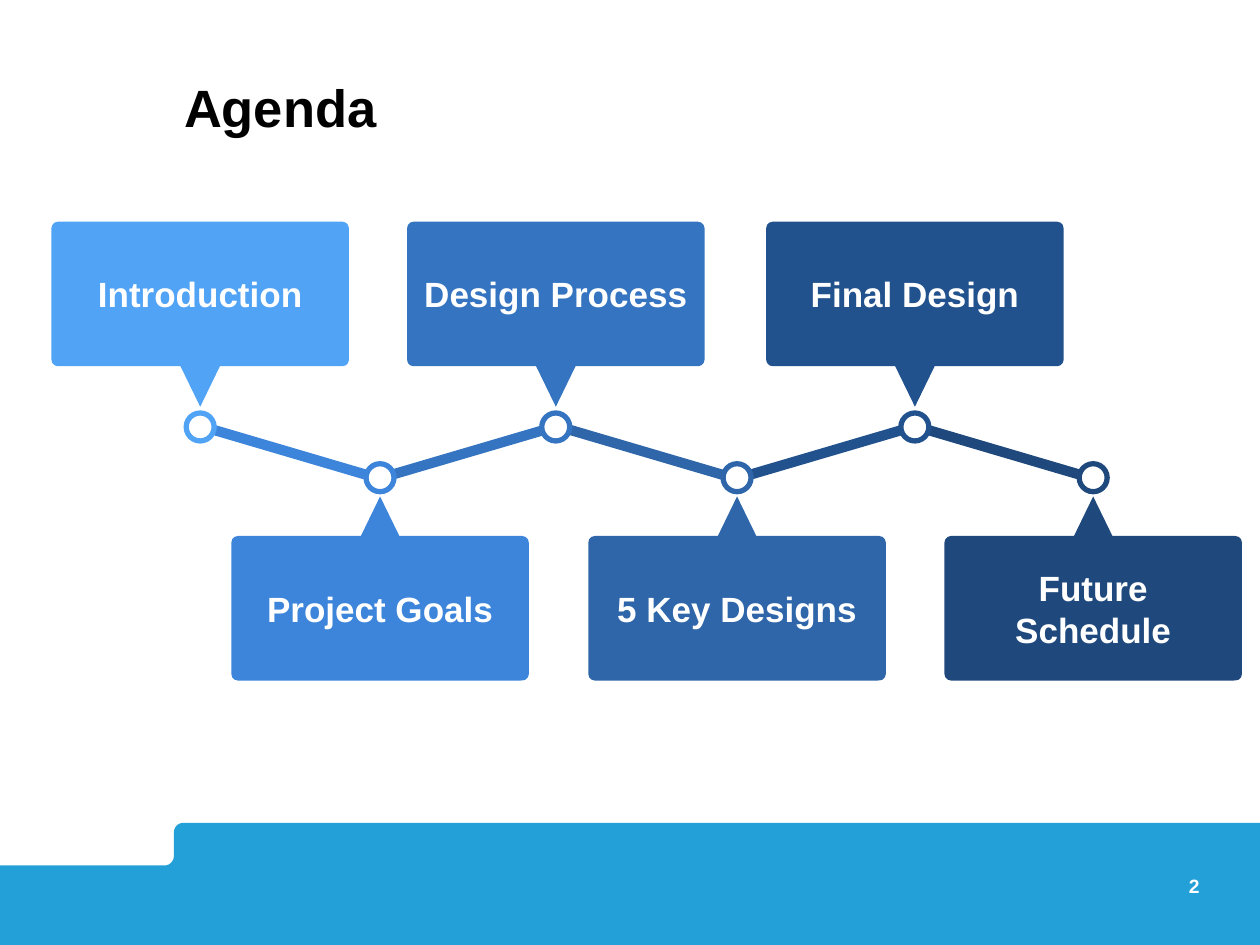
from math import cos, radians, sin
from pptx import Presentation
from pptx.dml.color import RGBColor
from pptx.enum.shapes import MSO_SHAPE
from pptx.enum.text import MSO_ANCHOR, PP_ALIGN
from pptx.util import Pt

BAR, CARD = MSO_SHAPE.ROUNDED_RECTANGLE, MSO_SHAPE.ROUNDED_RECTANGLE
DOT, TIP = MSO_SHAPE.OVAL, MSO_SHAPE.ISOSCELES_TRIANGLE
MID, TOP = MSO_ANCHOR.MIDDLE, MSO_ANCHOR.TOP
LEFT, MIDDLE, RIGHT = PP_ALIGN.LEFT, PP_ALIGN.CENTER, PP_ALIGN.RIGHT

THEME = {
    "font": "Arial", "ink": "000000", "white": "FFFFFF", "band": "24A0D8",
    "title": 30, "card": 20, "page": 11,
}
# Agenda steps: label, centre x, colour; they alternate above and below
STEPS = [
    ("Introduction", 114.4, "51A3F5"),
    ("Project Goals", 217.2, "3C85DB"),
    ("Design Process", 317.6, "3574C0"),
    ("5 Key Designs", 421.2, "2E66A9"),
    ("Final Design", 522.8, "22528D"),
    ("Future Schedule", 624.7, "1F497D"),
]
DOT_Y = (244, 273)
TIP_Y = (220.6, 295.5)
CARD_Y = (168, 347.6)


def write(shape, text, size, color, align, anchor=MID, inset=7.2, gap=1.0):
    frame = shape.text_frame
    edge = Pt(inset)
    look = {"word_wrap": True, "vertical_anchor": anchor, "margin_left": edge,
            "margin_right": edge, "margin_top": edge, "margin_bottom": edge}
    for key, val in look.items():
        setattr(frame, key, val)
    frame.text = text
    para = frame.paragraphs[0]
    para.alignment, para.line_spacing = align, gap
    font = para.runs[0].font
    for key, val in {"name": THEME["font"], "size": Pt(size), "bold": True}.items():
        setattr(font, key, val)
    font.color.rgb = RGBColor.from_string(color)


def draw(kind, x, y, wide, high, fill, turn=0, adj=None, line=None):
    """Add a filled shape centred on x, y."""
    shape = slide.shapes.add_shape(
        kind, Pt(x - wide / 2), Pt(y - high / 2), Pt(wide), Pt(high))
    shape.shadow.inherit = False
    shape.rotation = turn
    shape.fill.solid()
    shape.fill.fore_color.rgb = RGBColor.from_string(fill)
    if adj is not None:
        shape.adjustments[0] = adj
    if line:
        shape.line.color.rgb = RGBColor.from_string(line)
        shape.line.width = Pt(3)
    else:
        shape.line.fill.background()
    return shape


deck = Presentation()
deck.slide_width, deck.slide_height = Pt(720), Pt(540)
slide = deck.slides.add_slide(deck.slide_layouts[5])

# Footer band with a rounded step
curve = 5.4
turns = range(0, 91, 15)
rim = [(94 + curve * sin(radians(a)), 489.2 + curve * cos(radians(a))) for a in turns]
rim += [(104.8 - curve * cos(radians(a)), 475.6 - curve * sin(radians(a))) for a in turns]
rim += [(720, 470.2), (720, 540), (0, 540)]
path = slide.shapes.build_freeform(Pt(0), Pt(494.6))
path.add_line_segments([(Pt(x), Pt(y)) for x, y in rim], close=True)
band = path.convert_to_shape()
band.shadow.inherit = False
band.fill.solid()
band.fill.fore_color.rgb = RGBColor.from_string(THEME["band"])
band.line.fill.background()

# Title
title = slide.shapes.title
title.left, title.top, title.width, title.height = Pt(98), Pt(31.7), Pt(575.3), Pt(52.6)
write(title, "Agenda", THEME["title"], THEME["ink"], LEFT, gap=1.15)

# Bars between neighbouring steps
for i, (last, step) in enumerate(zip(STEPS, STEPS[1:])):
    turn = -16.4 if i % 2 else 16.4
    draw(BAR, (last[1] + step[1]) / 2, sum(DOT_Y) / 2, 110.9, 5.8, step[2], turn, 0.5)

# Cards with their pointers and dots
for i, (label, x, color) in enumerate(STEPS):
    low = i % 2
    draw(DOT, x, DOT_Y[low], 16, 16, THEME["white"], line=color)
    card = draw(CARD, x, CARD_Y[low], 170, 82.6, color, adj=0.045)
    write(card, label, THEME["card"], THEME["white"], MIDDLE)
    draw(TIP, x, TIP_Y[low], 23, 23.6, color, 0 if low else 180)

# Page number
page = slide.shapes.add_textbox(Pt(643.7), Pt(496), Pt(41.8), Pt(28.8))
write(page, "2", THEME["page"], THEME["white"], RIGHT, TOP, 0, 1.29)

deck.save("out.pptx")
